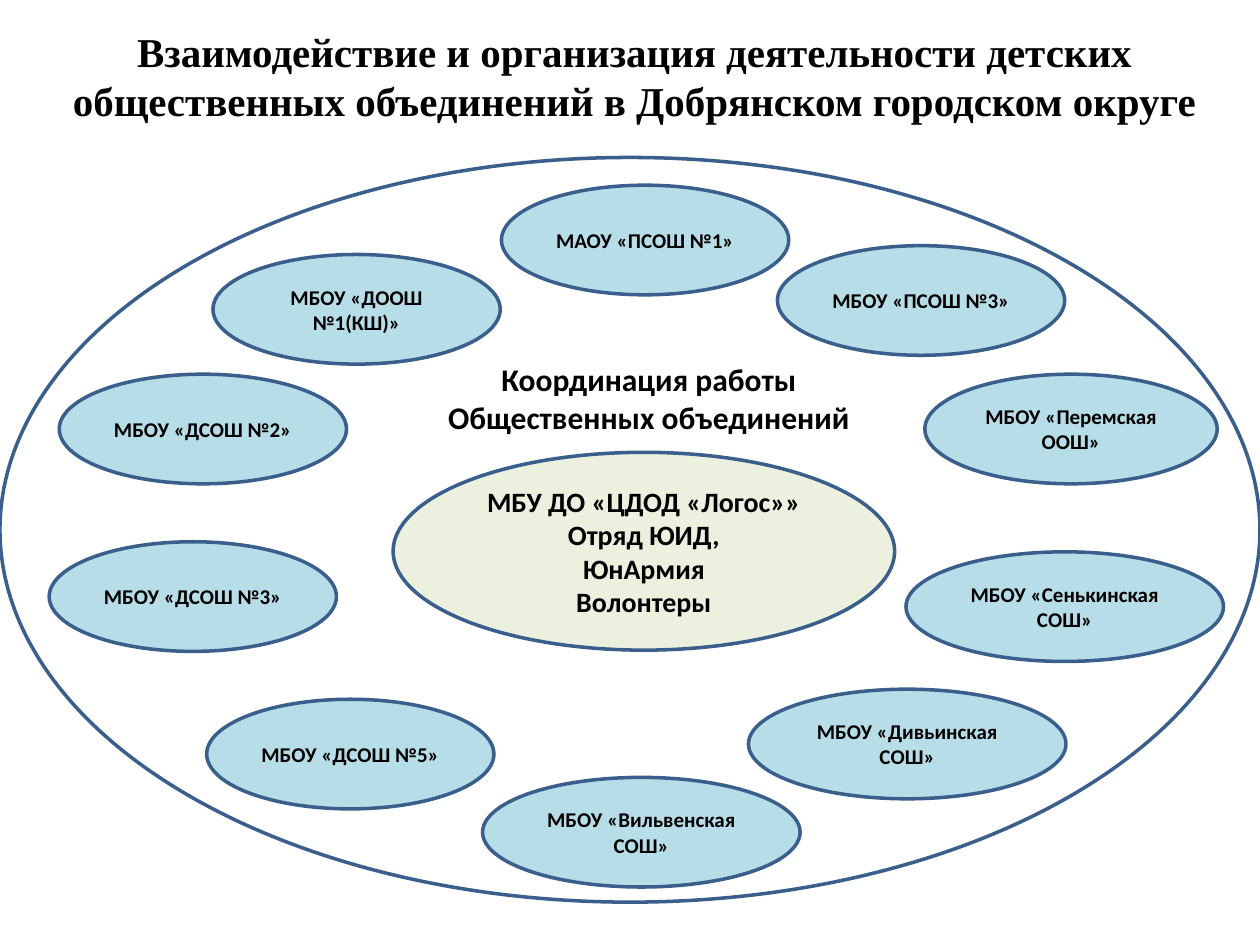
from pptx import Presentation
from pptx.dml.color import RGBColor
from pptx.enum.shapes import MSO_SHAPE
from pptx.enum.text import MSO_ANCHOR, MSO_AUTO_SIZE, PP_ALIGN
from pptx.util import Inches, Pt

COLORS = {"line": "3A5F8C", "school": "B7DEE8", "center": "EBF1DE", "text": "000000"}


def write(shape, text, size, font="Calibri"):
    """Fill the shape with bold, centred text, one paragraph per line."""
    frame = shape.text_frame
    frame.word_wrap = True
    frame.text = text
    for par in frame.paragraphs:
        par.alignment = PP_ALIGN.CENTER
        for run in par.runs:
            run.font.name = font
            run.font.size = Pt(size)
            run.font.bold = True
            run.font.color.rgb = RGBColor.from_string(COLORS["text"])


def add_oval(left, top, width, height, fill=None):
    oval = slide.shapes.add_shape(
        MSO_SHAPE.OVAL, Inches(left), Inches(top), Inches(width), Inches(height))
    oval.shadow.inherit = False
    if fill:
        oval.fill.solid()
        oval.fill.fore_color.rgb = RGBColor.from_string(COLORS[fill])
    else:
        oval.fill.background()
    oval.line.color.rgb = RGBColor.from_string(COLORS["line"])
    oval.line.width = Pt(2)
    oval.text_frame.vertical_anchor = MSO_ANCHOR.MIDDLE
    return oval


prs = Presentation()
prs.slide_width = Inches(10)
prs.slide_height = Inches(7.5)
slide = prs.slides.add_slide(prs.slide_layouts[6])

# Title
title = slide.shapes.add_textbox(Inches(0.31), Inches(0.16), Inches(9.45), Inches(0.94))
write(title, "Взаимодействие и организация деятельности детских "
      "общественных объединений в Добрянском городском округе", 23.4, "Times New Roman")

# Outer ring and centre
add_oval(0, 1.25, 10, 5.91)
center = add_oval(3.12, 3.59, 3.98, 1.57, "center")
write(center, "МБУ ДО «ЦДОД «Логос»»\nОтряд ЮИД,\nЮнАрмия\nВолонтеры", 16)

# Schools, clockwise from the top: name, left, top, width
schools = [
    ("МАОУ «ПСОШ №1»", 3.98, 1.47, 2.28),
    ("МБОУ «ПСОШ №3»", 6.17, 1.95, 2.28),
    ("МБОУ «Перемская ООШ»", 7.34, 2.97, 2.32),
    ("МБОУ «Сенькинская СОШ»", 7.19, 4.38, 2.52),
    ("МБОУ «Дивьинская СОШ»", 5.94, 5.47, 2.52),
    ("МБОУ «Вильвенская СОШ»", 3.83, 6.17, 2.52),
    ("МБОУ «ДСОШ №5»", 1.64, 5.55, 2.28),
    ("МБОУ «ДСОШ №3»", 0.39, 4.3, 2.28),
    ("МБОУ «ДСОШ №2»", 0.47, 2.97, 2.28),
    ("МБОУ «ДООШ №1(КШ)»", 1.69, 2.02, 2.28),
]
for name, left, top, width in schools:
    write(add_oval(left, top, width, 0.87, "school"), name, 12)

# Heading above the centre
head = slide.shapes.add_textbox(Inches(3.44), Inches(2.81), Inches(3.42), Inches(0.71))
write(head, "Координация работы\nОбщественных объединений", 18)
head.text_frame.word_wrap = False
head.text_frame.auto_size = MSO_AUTO_SIZE.SHAPE_TO_FIT_TEXT

prs.save("out.pptx")
